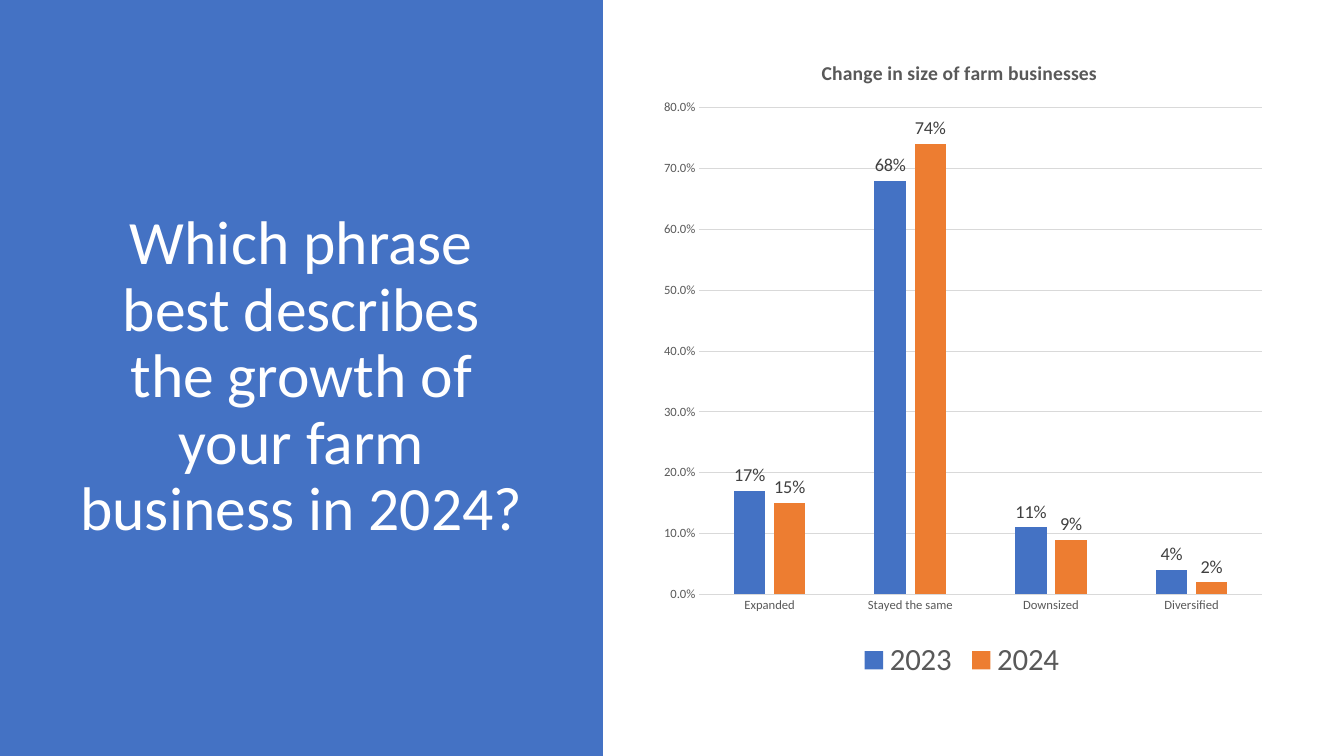
from dataclasses import dataclass

import lxml.etree
import pptx
import pptx.chart.data
import pptx.dml.color
import pptx.enum.chart
import pptx.enum.shapes
import pptx.enum.text
import pptx.oxml.ns
import pptx.util
from pptx.util import Inches


@dataclass(frozen=True)
class Theme:
    font: str = "Calibri"
    blue: str = "4472C4"
    orange: str = "ED7D31"
    white: str = "FFFFFF"
    grid: str = "D9D9D9"
    text: str = "595959"
    label: str = "404040"
    question_size: int = 44
    legend_size: int = 22
    title_size: int = 14
    label_size: int = 13
    axis_size: int = 9


@dataclass(frozen=True)
class Year:
    name: str
    shares: tuple[float, ...]
    color: str


THEME = Theme()
QUESTION = "Which phrase best describes the growth of your farm business in 2024?"
CHART_TITLE = "Change in size of farm businesses"
CATEGORIES = ("Expanded", "Stayed the same", "Downsized", "Diversified")
YEARS = (
    Year("2023", (0.17, 0.68, 0.11, 0.04), THEME.blue),
    Year("2024", (0.15, 0.74, 0.09, 0.02), THEME.orange),
)


def rgb(color: str) -> pptx.dml.color.RGBColor:
    return pptx.dml.color.RGBColor.from_string(color)


def style_font(font, size: int, color: str, bold: bool = False) -> None:
    font.name = THEME.font
    font.size = pptx.util.Pt(size)
    font.bold = bold
    font.color.rgb = rgb(color)


def style_line(line) -> None:
    line.color.rgb = rgb(THEME.grid)
    line.width = pptx.util.Pt(0.75)


def set_layout(parent, index: int, **settings) -> None:
    qn = pptx.oxml.ns.qn
    existing = parent.find(qn("c:layout"))
    if existing is not None:
        parent.remove(existing)
    layout = lxml.etree.Element(qn("c:layout"))
    manual = lxml.etree.SubElement(layout, qn("c:manualLayout"))
    for name, value in settings.items():
        lxml.etree.SubElement(manual, qn(f"c:{name}")).set("val", str(value))
    parent.insert(index, layout)


def add_question(slide) -> None:
    panel = slide.shapes.add_shape(
        pptx.enum.shapes.MSO_SHAPE.RECTANGLE, 0, 0, Inches(5.98), Inches(7.5)
    )
    panel.shadow.inherit = False
    panel.fill.solid()
    panel.fill.fore_color.rgb = rgb(THEME.blue)
    panel.line.fill.background()

    box = slide.shapes.add_textbox(Inches(0.68), Inches(0.7), Inches(4.62), Inches(6.1))
    frame = box.text_frame
    frame.word_wrap = True
    frame.vertical_anchor = pptx.enum.text.MSO_ANCHOR.MIDDLE
    paragraph = frame.paragraphs[0]
    paragraph.text = QUESTION
    paragraph.alignment = pptx.enum.text.PP_ALIGN.CENTER
    paragraph.line_spacing = 0.9
    style_font(paragraph.font, THEME.question_size, THEME.white)


def style_axes(chart) -> None:
    for axis in (chart.category_axis, chart.value_axis):
        axis.major_tick_mark = pptx.enum.chart.XL_TICK_MARK.NONE
        axis.minor_tick_mark = pptx.enum.chart.XL_TICK_MARK.NONE
        style_font(axis.tick_labels.font, THEME.axis_size, THEME.text)
    style_line(chart.category_axis.format.line)
    values = chart.value_axis
    values.minimum_scale, values.maximum_scale, values.major_unit = 0, 0.8, 0.1
    values.format.line.fill.background()
    values.has_major_gridlines = True
    style_line(values.major_gridlines.format.line)
    values.tick_labels.number_format = "0.0%"
    values.tick_labels.number_format_is_linked = False


def style_year(series, year: Year) -> None:
    series.invert_if_negative = False
    series.format.fill.solid()
    series.format.fill.fore_color.rgb = rgb(year.color)
    labels = series.data_labels
    labels.show_value = True
    labels.number_format = "0%"
    labels.number_format_is_linked = False
    labels.position = pptx.enum.chart.XL_LABEL_POSITION.OUTSIDE_END
    style_font(labels.font, THEME.label_size, THEME.label)


def add_growth_chart(slide) -> None:
    data = pptx.chart.data.CategoryChartData(number_format="0%")
    data.categories = CATEGORIES
    for year in YEARS:
        data.add_series(year.name, year.shares)
    chart = slide.shapes.add_chart(
        pptx.enum.chart.XL_CHART_TYPE.COLUMN_CLUSTERED,
        Inches(6.44), Inches(0.36), Inches(6.2), Inches(6.44), data,
    ).chart
    chart.font.name = THEME.font

    chart.has_title = True
    title = chart.chart_title
    paragraph = title.text_frame.paragraphs[0]
    paragraph.text = CHART_TITLE
    style_font(paragraph.font, THEME.title_size, THEME.text, bold=True)
    title.include_in_layout = False

    chart.has_legend = True
    chart.legend.position = pptx.enum.chart.XL_LEGEND_POSITION.BOTTOM
    chart.legend.include_in_layout = False
    style_font(chart.legend.font, THEME.legend_size, THEME.text)

    style_axes(chart)
    plot = chart.plots[0]
    plot.vary_by_categories = False
    plot.gap_width = 219
    plot.overlap = -27
    for series, year in zip(plot.series, YEARS):
        style_year(series, year)

    plot_area = chart.element.find(".//" + pptx.oxml.ns.qn("c:plotArea"))
    set_layout(
        plot_area, 0, layoutTarget="inner", xMode="edge", yMode="edge",
        x=0.08, y=0.11, w=0.9, h=0.75,
    )
    set_layout(title.element, 1, xMode="edge", yMode="edge", x=0.27, y=0.03)


def main() -> None:
    presentation = pptx.Presentation()
    presentation.slide_width = Inches(13.33)
    presentation.slide_height = Inches(7.5)
    slide = presentation.slides.add_slide(presentation.slide_layouts[6])
    add_question(slide)
    add_growth_chart(slide)
    presentation.save("out.pptx")


if __name__ == "__main__":
    main()
